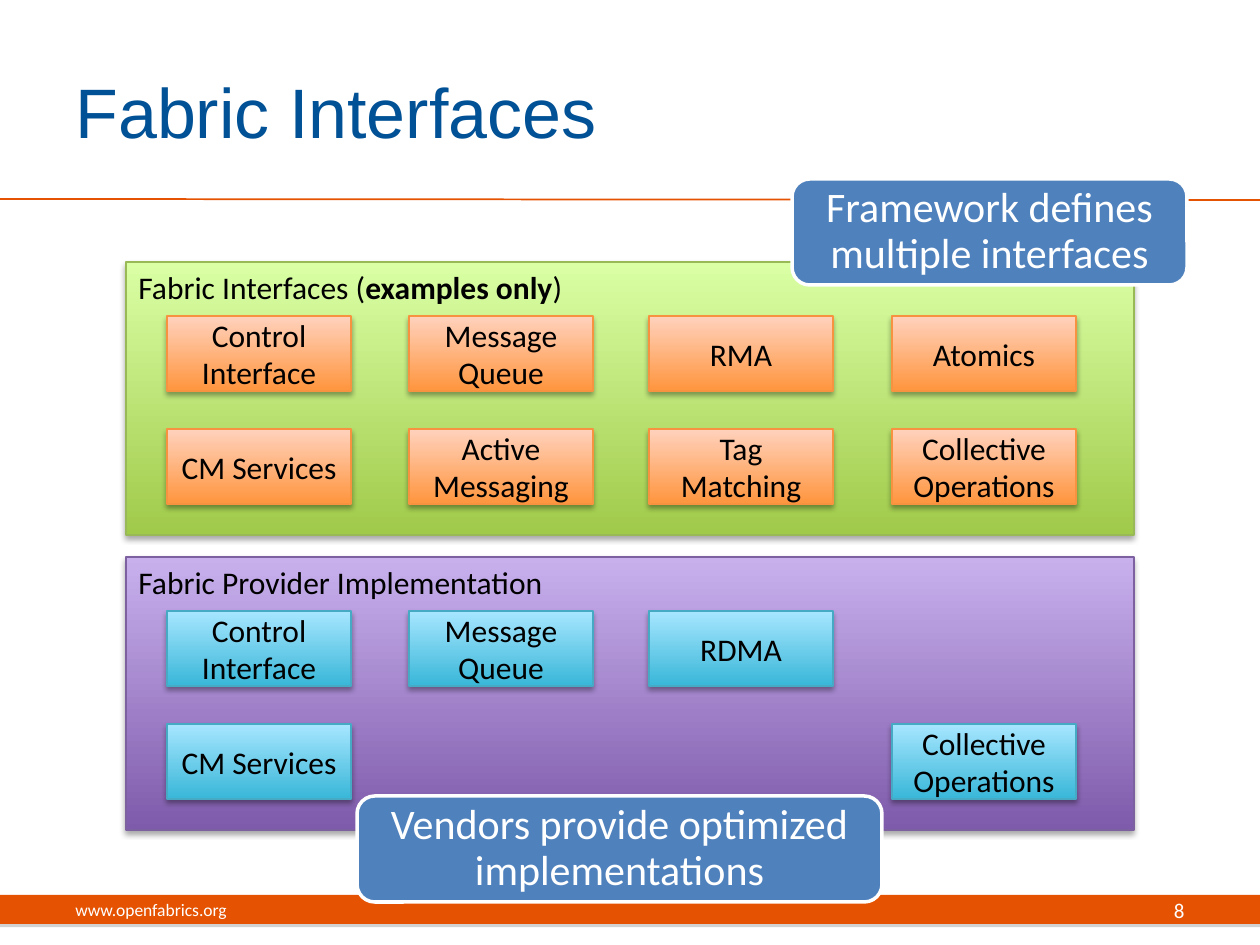
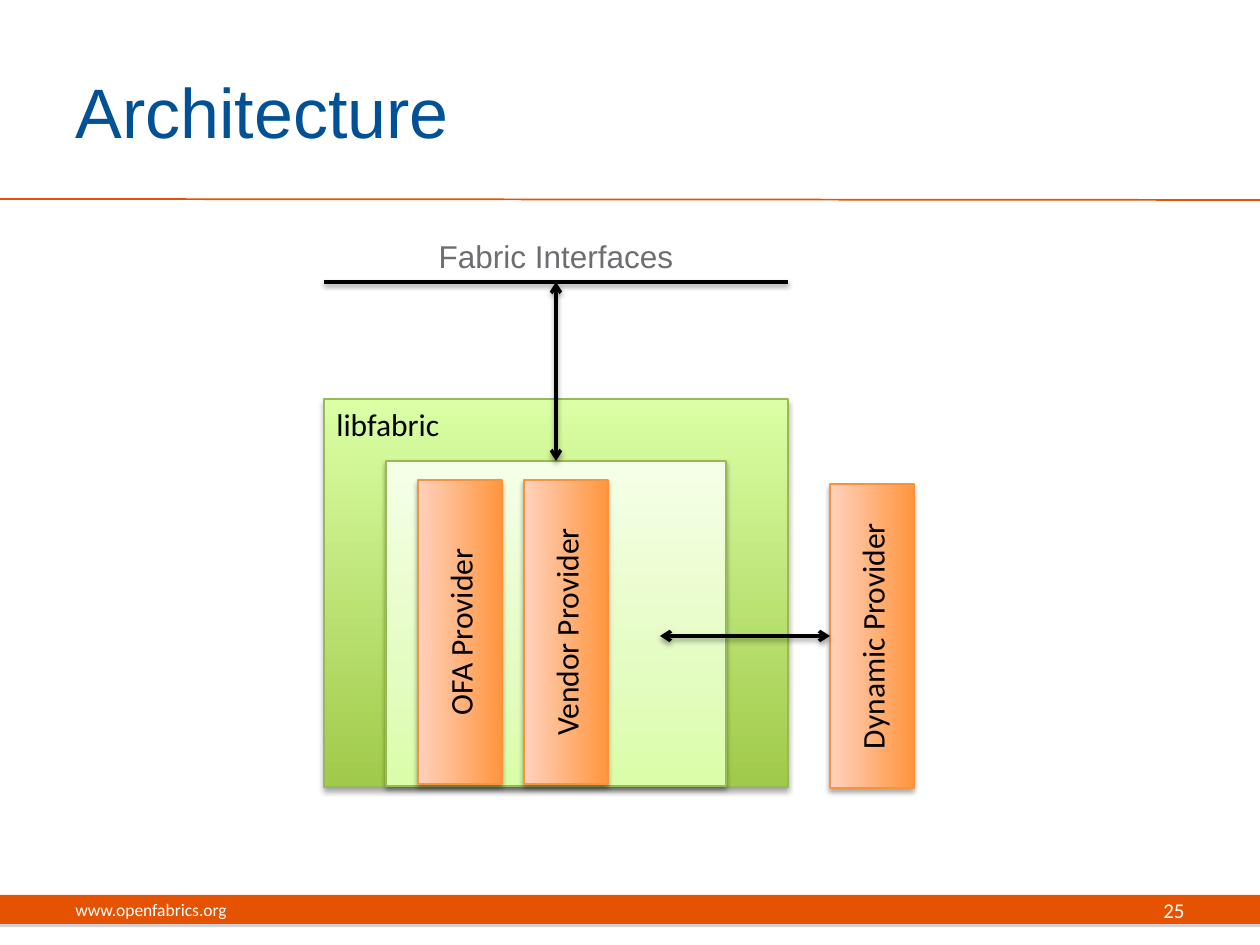
import pptx
import pptx.dml.color
import pptx.enum.shapes
import pptx.enum.text
import pptx.oxml.ns
import pptx.util
from lxml import etree
import copy

PX = 914400 / 126  # EMU in one px
qn = pptx.oxml.ns.qn
SHAPE = pptx.enum.shapes.MSO_SHAPE
ALIGN = pptx.enum.text.PP_ALIGN
ANCHOR = pptx.enum.text.MSO_ANCHOR

# Shared look
BLUE, ORANGE, GRAY = "005195", "E55302", "6D6E71"
BLACK, WHITE, CALLOUT_BLUE = "000000", "FFFFFF", "4F81BD"
SITE = "www.openfabrics.org"
# Each style: gradient stops from bottom to top, then line colour
GREEN_BOX = ([(0, "A0CA4A"), (1, "DAFFA5")], "98B955")
PALE_BOX = ([(0, "DAFDA7"), (0.35, "E4FCC2"), (1, "F5FFE7")], "98B955")
PURPLE_BOX = ([(0, "7F5BAB"), (1, "C8B0ED")], "7D60A0")
ORANGE_BOX = ([(0, "FF953E"), (1, "FFD2BD")], "F69240")
CYAN_BOX = ([(0, "39B7D8"), (1, "A7E6FF")], "46AAC5")
# Shadows: colour, opacity %, blur pt, distance pt
BOX_SHADOW = (BLACK, 35, 3.1, 1.8)
DEEP_SHADOW = (BLACK, 38, 3.1, 1.6)
BAND_SHADOW = ("808080", 35, 0, 1.8)

# Slide 1: panels with a grid of boxes, None for an empty cell
PANELS = [
    dict(title="Fabric Interfaces (examples only)", bold="examples only", top=262,
         panel_style=GREEN_BOX, box_style=ORANGE_BOX,
         rows=[["Control\nInterface", "Message Queue", "RMA", "Atomics"],
               ["CM Services", "Active Messaging", "Tag Matching", "Collective Operations"]]),
    dict(title="Fabric Provider Implementation", bold="", top=557,
         panel_style=PURPLE_BOX, box_style=CYAN_BOX,
         rows=[["Control Interface", "Message Queue", "RDMA", None],
               ["CM Services", None, None, "Collective Operations"]]),
]
PANEL_LEFT, PANEL_WIDTH, PANEL_HEIGHT = 126, 1008, 273
COLUMN_LEFTS = [167, 409, 649, 892]
BOX_WIDTH, BOX_HEIGHT, FIRST_ROW, ROW_STEP = 184, 75, 54, 113
CALLOUTS = [
    ("Framework defines multiple interfaces", (792, 179, 395, 106)),
    ("Vendors provide optimized implementations", (357, 796, 525, 106)),
]

# Slide 2: upright provider bars (left, top)
LIBRARY = (324, 399, 464, 388)
PROVIDER_AREA = (386, 461, 340, 325)
INTERFACE_LINE_TOP = 282
BAR_WIDTH, BAR_HEIGHT = 84, 304
PROVIDERS = {
    "OFA Provider": (418, 480),
    "Vendor Provider": (524, 480),
    "Dynamic Provider": (830, 484),
}


def emu(px):
    return round(px * PX)


def color(value):
    return pptx.dml.color.RGBColor.from_string(value)


def write_text(shape, text, size=18, font="Calibri", fill=BLACK, align=ALIGN.LEFT,
               anchor=ANCHOR.MIDDLE, bold="", spacing=None, margin=None):
    """Fill a shape with text; the part equal to bold is set in bold."""
    frame = shape.text_frame
    frame.word_wrap = True
    frame.vertical_anchor = anchor
    if margin is not None:
        frame.margin_left = frame.margin_right = emu(margin)
        frame.margin_top = frame.margin_bottom = emu(margin)
    for index, line in enumerate(text.split("\n")):
        paragraph = frame.add_paragraph() if index else frame.paragraphs[0]
        paragraph.alignment = align
        if spacing:
            paragraph.line_spacing = spacing
        for part in line.partition(bold) if bold else [line]:
            if not part:
                continue
            run = paragraph.add_run()
            run.text = part
            run.font.name = font
            run.font.size = pptx.util.Pt(size)
            run.font.bold = part == bold
            run.font.color.rgb = color(fill)


def add_text(slide, text, area, **text_format):
    box = slide.shapes.add_textbox(*map(emu, area))
    write_text(box, text, **text_format)


def set_effects(shape, shadow=None):
    """Replace the theme shadow by the given one, or by none."""
    effects = etree.SubElement(shape._element.spPr, qn("a:effectLst"))
    if shadow:
        tone, opacity, blur, distance = shadow
        outer = etree.SubElement(effects, qn("a:outerShdw"), blurRad=str(pptx.util.Pt(blur)),
                                 dist=str(pptx.util.Pt(distance)), dir="5400000",
                                 rotWithShape="0")
        tint = etree.SubElement(outer, qn("a:srgbClr"), val=tone)
        etree.SubElement(tint, qn("a:alpha"), val=str(opacity * 1000))


def add_solid(slide, kind, area, fill, line=None, shadow=None):
    shape = slide.shapes.add_shape(kind, *map(emu, area))
    shape.fill.solid()
    shape.fill.fore_color.rgb = color(fill)
    if line:
        shape.line.color.rgb = color(line)
        shape.line.width = pptx.util.Pt(2)
    else:
        shape.line.fill.background()
    set_effects(shape, shadow)
    return shape


def add_gradient_box(slide, area, style, shadow=BOX_SHADOW):
    stops, line = style
    shape = slide.shapes.add_shape(SHAPE.RECTANGLE, *map(emu, area))
    shape.fill.gradient()
    shape.fill.gradient_angle = 90
    stop_list = shape._element.spPr.find(".//" + qn("a:gsLst"))
    while len(stop_list) < len(stops):
        stop_list.append(copy.deepcopy(stop_list[-1]))
    for stop, (position, tone) in zip(shape.fill.gradient_stops, stops):
        stop.position = position
        stop.color.rgb = color(tone)
    shape.line.color.rgb = color(line)
    shape.line.width = pptx.util.Pt(0.75)
    set_effects(shape, shadow)
    return shape


def add_line(slide, start, end, tone=BLACK, width=2, shadow=DEEP_SHADOW,
             arrows=False, target=None, site=0):
    ends = [emu(value) for value in (*start, *end)]
    connector = slide.shapes.add_connector(
        pptx.enum.shapes.MSO_CONNECTOR.STRAIGHT, *ends)
    if target is not None:
        connector.end_connect(target, site)
        # Joining ignores rotation, so the end is placed again
        connector.end_x, connector.end_y = ends[2:]
    connector.line.color.rgb = color(tone)
    connector.line.width = pptx.util.Pt(width)
    if arrows:
        outline = connector._element.spPr.find(qn("a:ln"))
        for tag in ("a:headEnd", "a:tailEnd"):
            etree.SubElement(outline, qn(tag), type="arrow")
    set_effects(connector, shadow)


def add_bar(slide, text, left, top):
    """Provider bar turned a quarter, so that its text reads upwards."""
    shift = (BAR_HEIGHT - BAR_WIDTH) // 2
    bar = add_gradient_box(slide, (left - shift, top + shift, BAR_HEIGHT, BAR_WIDTH), ORANGE_BOX)
    bar.rotation = 270
    write_text(bar, text, align=ALIGN.CENTER)
    return bar


def add_slide(presentation, title, number):
    """Blank slide with the shared title, rule and footer."""
    slide = presentation.slides.add_slide(presentation.slide_layouts[6])
    add_solid(slide, SHAPE.RECTANGLE, (0, 895, 1260, 29), ORANGE, shadow=BAND_SHADOW)
    add_line(slide, (0, 199), (1260, 200), ORANGE, width=1, shadow=None)
    add_text(slide, title, (63, 32, 1029, 157), size=40, font="Arial", fill=BLUE)
    add_text(slide, SITE, (63, 885, 399, 50), size=10, fill=WHITE)
    add_text(slide, str(number), (903, 885, 294, 50), size=12, fill=WHITE, align=ALIGN.RIGHT)
    return slide


def build_interfaces(presentation):
    slide = add_slide(presentation, "Fabric Interfaces", 8)
    for panel in PANELS:
        area = (PANEL_LEFT, panel["top"], PANEL_WIDTH, PANEL_HEIGHT)
        shape = add_gradient_box(slide, area, panel["panel_style"])
        write_text(shape, panel["title"], bold=panel["bold"], anchor=ANCHOR.TOP)
        for row, names in enumerate(panel["rows"]):
            top = panel["top"] + FIRST_ROW + row * ROW_STEP
            for left, name in zip(COLUMN_LEFTS, names):
                if name:
                    box = add_gradient_box(slide, (left, top, BOX_WIDTH, BOX_HEIGHT),
                                           panel["box_style"])
                    write_text(box, name, align=ALIGN.CENTER)
    for text, area in CALLOUTS:
        callout = add_solid(slide, SHAPE.ROUNDED_RECTANGLE, area, CALLOUT_BLUE, line=WHITE)
        write_text(callout, text, size=24, fill=WHITE, align=ALIGN.CENTER,
                   spacing=0.9, margin=15)


def build_architecture(presentation):
    slide = add_slide(presentation, "Architecture", 25)
    library = add_gradient_box(slide, LIBRARY, GREEN_BOX)
    write_text(library, "libfabric", anchor=ANCHOR.TOP)
    provider_area = add_gradient_box(slide, PROVIDER_AREA, PALE_BOX, DEEP_SHADOW)
    bars = {name: add_bar(slide, name, *place) for name, place in PROVIDERS.items()}

    # Interface line above the library
    left, _, width, _ = LIBRARY
    middle = left + width // 2
    add_line(slide, (left, INTERFACE_LINE_TOP), (left + width, INTERFACE_LINE_TOP))
    add_text(slide, "Fabric Interfaces", (left, 231, width, 50), font="Arial", fill=GRAY,
             align=ALIGN.CENTER, anchor=ANCHOR.TOP)

    # Two-way arrows
    add_line(slide, (middle, INTERFACE_LINE_TOP), (middle, PROVIDER_AREA[1]),
             arrows=True, target=provider_area, site=0)
    bar_left, bar_top = PROVIDERS["Dynamic Provider"]
    arrow_y = bar_top + BAR_HEIGHT // 2
    # The bar is turned, so its top side faces left
    add_line(slide, (660, arrow_y), (bar_left, arrow_y),
             arrows=True, target=bars["Dynamic Provider"], site=0)


def main():
    presentation = pptx.Presentation()
    presentation.slide_width = emu(1260)
    presentation.slide_height = emu(945)
    build_interfaces(presentation)
    build_architecture(presentation)
    presentation.save("out.pptx")


if __name__ == "__main__":
    main()
